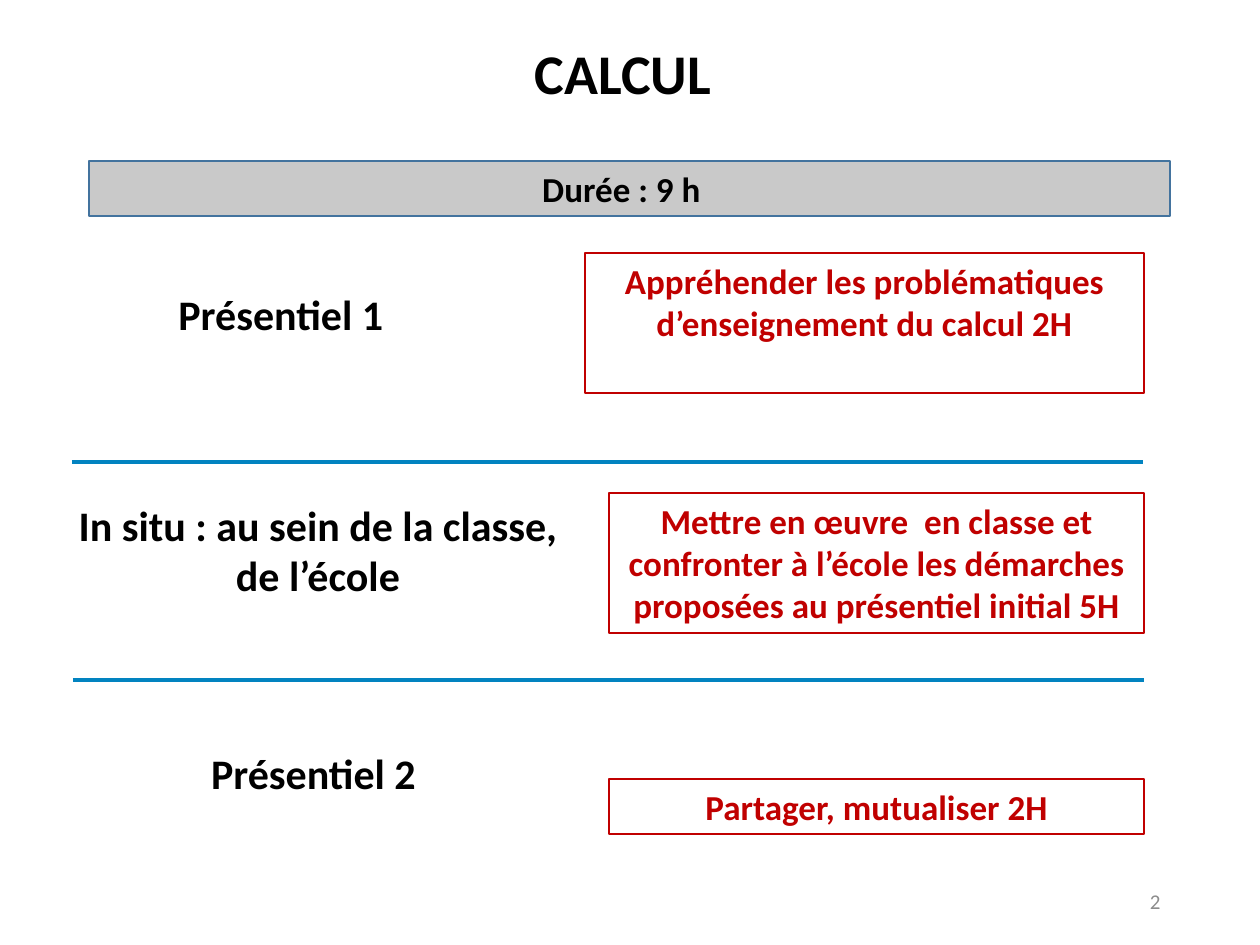
"""Builds the slide that outlines the nine-hour CALCUL training course."""
from lxml import etree
from pptx import Presentation
from pptx import util as u
from pptx.dml.color import RGBColor
from pptx.enum import shapes, text
from pptx.oxml.ns import qn

BLACK = RGBColor(0x00, 0x00, 0x00)
RED = RGBColor(0xC0, 0x00, 0x00)
BLUE = RGBColor(0x02, 0x83, 0xC0)
STEEL = RGBColor(0x43, 0x73, 0x9E)
SILVER = RGBColor(0xC9, 0xC9, 0xC9)
GREY = RGBColor(0x8C, 0x8C, 0x8C)
PX_PER_INCH = 126


def px(*lengths):
    return [u.Inches(length / PX_PER_INCH) for length in lengths]


class CourseSlide:
    """Holds the text style and the slide being filled."""

    font = "Calibri"

    def __init__(self, deck):
        self.slide = deck.slides.add_slide(deck.slide_layouts[6])

    def set_wording(self, shape, wording, size, color, bold=True, inset=0,
                    align=text.PP_ALIGN.CENTER, anchor=text.MSO_ANCHOR.TOP):
        frame = shape.text_frame
        frame.word_wrap = True
        frame.vertical_anchor = anchor
        frame.margin_right += px(inset)[0]
        frame.text = wording
        paragraph = frame.paragraphs[0]
        paragraph.alignment = align
        font = paragraph.runs[0].font
        font.name, font.size, font.bold = self.font, u.Pt(size), bold
        font.color.rgb = color
        return paragraph

    def label(self, box, wording, size=24, color=BLACK, **style):
        area = self.slide.shapes.add_textbox(*px(*box))
        return self.set_wording(area, wording, size, color, **style)

    def panel(self, box, wording, color=RED, outline=RED, fill=None, **style):
        frame = self.slide.shapes.add_shape(shapes.MSO_SHAPE.RECTANGLE, *px(*box))
        frame.shadow.inherit = False
        if fill is None:
            frame.fill.background()
        else:
            frame.fill.solid()
            frame.fill.fore_color.rgb = fill
        frame.line.color.rgb = outline
        frame.line.width = u.Pt(0.75)
        self.set_wording(frame, wording, 20, color, **style)

    def divider(self, left, top, width):
        rule = self.slide.shapes.add_connector(
            shapes.MSO_CONNECTOR.STRAIGHT, *px(left, top, left + width, top))
        rule.line.color.rgb = BLUE
        rule.line.width = u.Pt(2.25)
        etree.SubElement(rule._element.spPr, qn("a:effectLst"))


def main():
    deck = Presentation()
    deck.slide_width, deck.slide_height = px(1260, 945)
    course = CourseSlide(deck)

    title = course.label((63, 38, 1134, 77), "CALCUL", size=32, inset=14,
                         anchor=text.MSO_ANCHOR.MIDDLE)
    title.line_spacing = 0.9
    course.label((890, 876, 283, 50), "2", size=12, color=GREY, bold=False,
                 align=text.PP_ALIGN.RIGHT, anchor=text.MSO_ANCHOR.MIDDLE)

    course.label((50, 282, 480, 115), "Présentiel 1", inset=18)
    course.label((50, 493, 536, 165), "In situ : au sein de la classe, de l’école")
    course.label((50, 741, 536, 64), "Présentiel 2", inset=9)

    course.divider(72, 462, 1071)
    course.divider(73, 680, 1071)

    course.panel((585, 253, 559, 140),
                 "Appréhender les problématiques d’enseignement du calcul 2H")
    course.panel((609, 493, 535, 140),
                 "Mettre en œuvre  en classe et confronter à l’école "
                 "les démarches proposées au présentiel initial 5H")
    course.panel((609, 779, 535, 55), "Partager, mutualiser 2H")
    course.panel((89, 161, 1081, 55), "Durée : 9 h", color=BLACK,
                 outline=STEEL, fill=SILVER, inset=16)

    deck.save("out.pptx")


if __name__ == "__main__":
    main()
